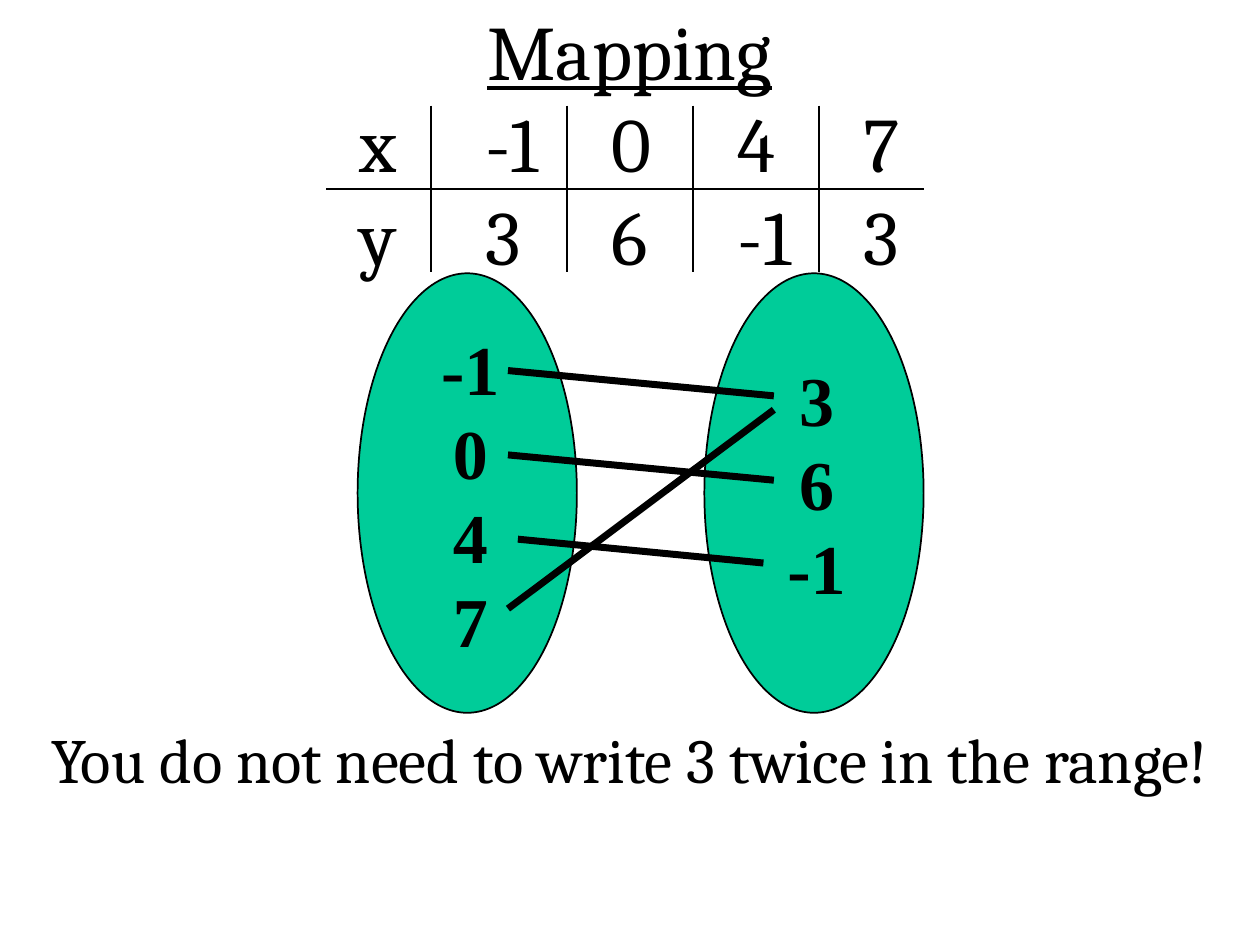
"""Build the slide on mapping a table of x and y values from domain to range."""
import lxml.etree
import pptx
import pptx.dml.color
import pptx.enum.shapes
import pptx.enum.text
import pptx.oxml.ns
import pptx.util

Cm = pptx.util.Cm
Pt = pptx.util.Pt
qn = pptx.oxml.ns.qn
CENTER = pptx.enum.text.PP_ALIGN.CENTER

BLACK = pptx.dml.color.RGBColor(0, 0, 0)
GREEN = pptx.dml.color.RGBColor(0x00, 0xCC, 0x99)
THEME = {
    "title": {"name": "Cambria", "size": Pt(44), "underline": True},
    "values": {"name": "Cambria", "size": Pt(44), "underline": False},
    "note": {"name": "Cambria", "size": Pt(36)},
    "set": {"name": "Times New Roman", "size": Pt(40), "bold": True},
    "thin": Pt(1),
    "thick": Pt(4),
}


def add_text(paragraph, text, style):
    paragraph.alignment = CENTER
    run = paragraph.add_run()
    run.text = text
    for attribute, value in THEME[style].items():
        setattr(run.font, attribute, value)
    run.font.color.rgb = BLACK


def add_line(slide, start_x, start_y, end_x, end_y, weight):
    connector = slide.shapes.add_connector(
        pptx.enum.shapes.MSO_CONNECTOR.STRAIGHT,
        Cm(start_x), Cm(start_y), Cm(end_x), Cm(end_y))
    connector.line.color.rgb = BLACK
    connector.line.width = THEME[weight]
    lxml.etree.SubElement(connector.element.spPr, qn("a:effectLst"))


presentation = pptx.Presentation()
presentation.slide_width = Cm(25.4)
presentation.slide_height = Cm(19.05)
slide = presentation.slides.add_slide(presentation.slide_layouts[5])

title = slide.shapes.title
title_box = {"left": Cm(1.9), "top": Cm(1.27), "width": Cm(21.59), "height": Cm(3.18)}
for attribute, value in title_box.items():
    setattr(title, attribute, value)
title.text_frame.auto_size = pptx.enum.text.MSO_AUTO_SIZE.NONE
title.text_frame.vertical_anchor = pptx.enum.text.MSO_ANCHOR.MIDDLE
paragraph = title.text_frame.paragraphs[0]
tab_list = lxml.etree.SubElement(paragraph._p.get_or_add_pPr(), qn("a:tabLst"))
for column in range(1, 5):
    lxml.etree.SubElement(tab_list, qn("a:tab"), pos=str(Cm(2.54 * column)), algn="l")
add_text(paragraph, "Mapping", "title")
for row in (["x", "-1", "0", "4", "7"], ["y", "3", "6", "-1", "3"]):
    paragraph.add_line_break()
    add_text(paragraph, "\t".join(row), "values")

add_line(slide, 6.58, 3.81, 18.62, 3.81, "thin")
for divider_x in (8.69, 11.43, 13.97, 16.51):
    add_line(slide, divider_x, 2.13, divider_x, 5.49, "thin")

for ellipse_left in (7.21, 14.2):
    ellipse = slide.shapes.add_shape(
        pptx.enum.shapes.MSO_SHAPE.OVAL,
        Cm(ellipse_left), Cm(5.51), Cm(4.42), Cm(8.86))
    ellipse.shadow.inherit = False
    ellipse.fill.solid()
    ellipse.fill.fore_color.rgb = GREEN
    ellipse.line.color.rgb = BLACK
    ellipse.line.width = THEME["thin"]

text_boxes = [
    (8.64, 6.43, 1.68, 7.01, False, "set", ["-1", "0", "4", "7"]),
    (15.62, 7.06, 1.68, 5.33, False, "set", ["3", "6", "-1"]),
    (0.2, 14.4, 24.97, 1.9, True, "note",
     ["You do not need to write 3 twice in the range!"]),
]
for left, top, width, height, wrap, style, lines in text_boxes:
    text_box = slide.shapes.add_textbox(Cm(left), Cm(top), Cm(width), Cm(height))
    text_frame = text_box.text_frame
    text_frame.word_wrap = wrap
    for index, line in enumerate(lines):
        paragraph = text_frame.add_paragraph() if index else text_frame.paragraphs[0]
        add_text(paragraph, line, style)

mapping_lines = [
    (10.24, 7.47, 15.6, 7.98),
    (10.24, 9.17, 15.6, 9.68),
    (10.44, 10.87, 15.39, 11.35),
    (10.24, 12.27, 15.6, 8.26),
]
for ends in mapping_lines:
    add_line(slide, *ends, "thick")

presentation.save("out.pptx")
